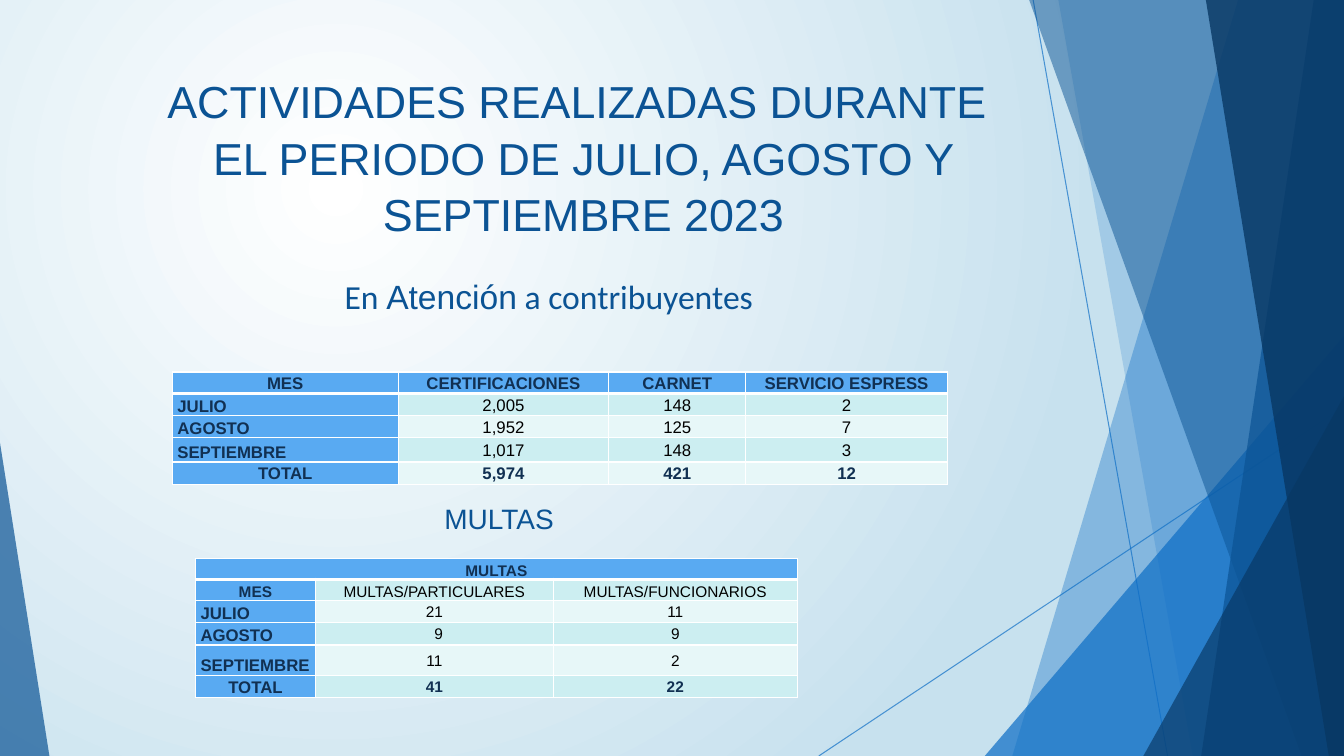
from lxml import etree
from pptx import Presentation
from pptx import util as u
from pptx.dml.color import RGBColor
from pptx.enum import dml, shapes, text
from pptx.oxml.ns import qn

COLORS = {
    "white": "FFFFFF", "sky": "C7E1EE", "blue": "0F6FC6", "deep": "0B5394",
    "navy": "083763", "label": "59AAF2", "ink": "113052", "black": "000000",
    "band": "CCEEF1", "light": "E7F7F8",
}
COLUMNS, ROWS = 40, 22.5

deck = Presentation()
deck.slide_width, deck.slide_height = u.Inches(13.333), u.Inches(7.5)
unit = deck.slide_width / COLUMNS
page = deck.slides.add_slide(deck.slide_layouts[6])


def paint(fill, color, alpha=100):
    fill.solid()
    fill.fore_color.rgb = RGBColor.from_string(COLORS[color])
    if alpha < 100:
        tint = fill._xPr.find(qn("a:solidFill"))[0]
        etree.SubElement(tint, qn("a:alpha"), val=str(alpha * 1000))


def add_span(para, words, size, color="deep", font="Arial", bold=False):
    span = para.add_run()
    span.text = words
    span.font.size = u.Pt(size)
    span.font.name = font
    span.font.bold = bold
    span.font.color.rgb = RGBColor.from_string(COLORS[color])


backdrop = page.background.fill
backdrop.gradient()
for stop, color, place in zip(backdrop.gradient_stops, ("white", "sky"), (0, 1)):
    stop.color.rgb = RGBColor.from_string(COLORS[color])
    stop.position = place
gradient = page.element.find(".//" + qn("a:gradFill"))
gradient.remove(gradient.find(qn("a:lin")))
circle = etree.SubElement(gradient, qn("a:path"), {"path": "circle"})
etree.SubElement(circle, qn("a:fillToRect"), l="50000", t="50000", r="100000", b="100000")

for x1, y1, x2, y2 in ((30.75, 0, 34.75, ROWS), (COLUMNS, 12.1, 24.37, ROWS)):
    ends = [round(n * unit) for n in (x1, y1, x2, y2)]
    ray = page.shapes.add_connector(shapes.MSO_CONNECTOR.STRAIGHT, *ends)
    ray.line.width = u.Pt(0.75)
    paint(ray.line.fill, "blue", 70)
    etree.SubElement(ray._element.spPr, qn("a:effectLst"))

facets = [
    ("band", (36.85, 30.13), "blue", 36),
    ("band", (31.5, 35.5), "blue", 20),
    ("wedge", (29.31, 10, 10.69, 1), "blue", 72),
    ("band", (30.63, 38.74), "deep", 50),
    ("band", (39.1, 35.75), "deep", 70),
    ("band", (35.89, 39.55), "navy", 80),
    ("wedge", (34.03, 11.8, 5.97, 1), "navy", 66),
    ("wedge", (0, 13.18, 1.47, 0), "deep", 70),
]
for kind, place, color, alpha in facets:
    if kind == "band":
        top_x, bottom_x = place
        corners = [(COLUMNS, 0), (COLUMNS, ROWS), (bottom_x, ROWS)]
        outline = page.shapes.build_freeform(round(top_x * unit), 0)
        outline.add_line_segments([(round(x * unit), round(y * unit)) for x, y in corners])
        facet = outline.convert_to_shape()
    else:
        left, top, width, tip = place
        frame = [round(n * unit) for n in (left, top, width, ROWS - top)]
        facet = page.shapes.add_shape(shapes.MSO_SHAPE.ISOSCELES_TRIANGLE, *frame)
        facet.adjustments[0] = tip
    facet.shadow.inherit = False
    facet.line.fill.background()
    paint(facet.fill, color, alpha)

headings = [
    ((4.32, 1.98, 26.1, 6), 1.05, True, "TOP", "CENTER", 32,
     [("ACTIVIDADES REALIZADAS DURANTE ", "Arial"), None,
      ("EL PERIODO DE JULIO, AGOSTO Y SEPTIEMBRE 2023", "Arial")]),
    ((9.96, 7.98, 13.74, 1.59), 1.07, True, "TOP", "LEFT", 24,
     [("En ", "Calibri"), ("Atención", "Arial"), (" a contribuyentes", "Calibri")]),
    ((12.93, 14.76, 3.9, 1.32), 1, False, "MIDDLE", "LEFT", 20, [("MULTAS", "Arial")]),
]
for place, spacing, wrap, anchor, align, size, pieces in headings:
    box = page.shapes.add_textbox(*[round(n * unit) for n in place])
    box.text_frame.word_wrap = wrap
    box.text_frame.vertical_anchor = text.MSO_ANCHOR[anchor]
    para = box.text_frame.paragraphs[0]
    para.alignment = text.PP_ALIGN[align]
    para.line_spacing = spacing
    for piece in pieces:
        if piece:
            add_span(para, piece[0], size, font=piece[1])
        else:
            para.add_line_break()

services = [
    ["MES", "CERTIFICACIONES", "CARNET", "SERVICIO ESPRESS"],
    ["JULIO", "2,005", "148", "2"],
    ["AGOSTO", "1,952", "125", "7"],
    ["SEPTIEMBRE", "1,017", "148", "3"],
    ["TOTAL", "5,974", "421", "12"],
]
fines = [
    ["MULTAS", "", ""],
    ["MES", "MULTAS/PARTICULARES", "MULTAS/FUNCIONARIOS"],
    ["JULIO", "21", "11"],
    ["AGOSTO", "9", "9"],
    ["SEPTIEMBRE", "11", "2"],
    ["TOTAL", "41", "22"],
]
tables = [
    (services, 5.13, 11.07, (6.72, 6.27, 4.08, 6), (0.6, 0.66, 0.66, 0.72, 0.66), 12, 1),
    (fines, 5.82, 16.62, (3.57, 7.08, 7.26), (0.63, 0.63, 0.66, 0.66, 0.9, 0.66), 11, 2),
]
for rows, left, top, widths, heights, size, head_rows in tables:
    frame = [round(n * unit) for n in (left, top, sum(widths), sum(heights))]
    grid = page.shapes.add_table(len(rows), len(widths), *frame).table
    grid.horz_banding = False
    for column, width in zip(grid.columns, widths):
        column.width = round(width * unit)
    for row, height in zip(grid.rows, heights):
        row.height = round(height * unit)
    for r, row in enumerate(rows):
        for c, words in enumerate(row):
            cell = grid.cell(r, c)
            is_label = r == 0 or c == 0
            is_month = c == 0 and head_rows <= r < len(rows) - 1
            is_low = is_month or (head_rows == 2 and (r < 2 or c == 0))
            cell.margin_left = cell.margin_right = round(0.15 * unit)
            cell.margin_top = cell.margin_bottom = 0
            cell.vertical_anchor = text.MSO_ANCHOR.BOTTOM if is_low else text.MSO_ANCHOR.MIDDLE
            for side in "LRTB":
                weight = 3 if (r, side) in ((0, "B"), (1, "T")) else 1
                edge = etree.SubElement(cell._tc.get_or_add_tcPr(), qn("a:ln" + side),
                                        w=str(u.Pt(weight)))
                solid = etree.SubElement(edge, qn("a:solidFill"))
                etree.SubElement(solid, qn("a:srgbClr"), val=COLORS["white"])
            paint(cell.fill, "label" if is_label else "band" if r % 2 else "light")
            para = cell.text_frame.paragraphs[0]
            para.alignment = text.PP_ALIGN.LEFT if is_month else text.PP_ALIGN.CENTER
            para.line_spacing = 1.07
            strong = is_label or r == len(rows) - 1
            if words:
                add_span(para, words, 12 if c == 0 and r >= head_rows else size,
                         "ink" if strong else "black", bold=strong)
    if head_rows == 2:
        grid.cell(0, 0).merge(grid.cell(0, len(widths) - 1))
        grid.cell(3, 1).margin_left = round(0.4 * unit)

deck.save("out.pptx")
